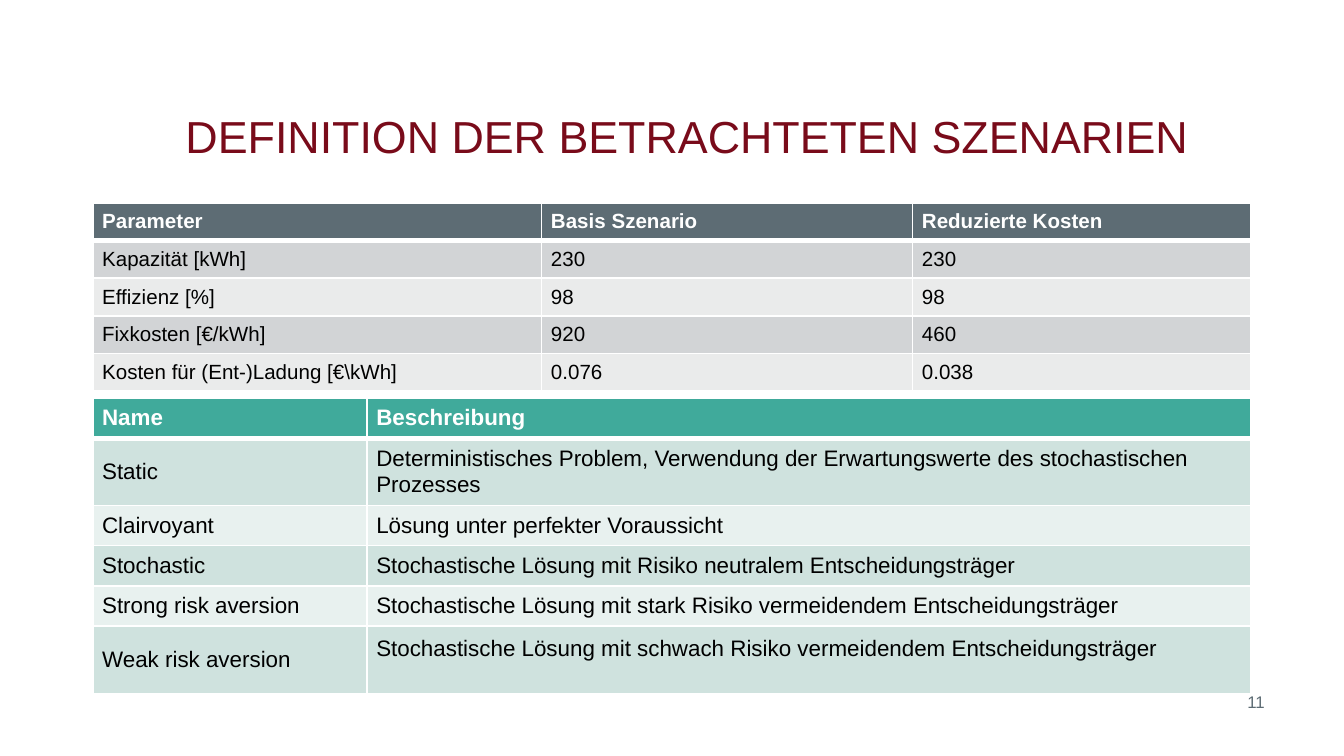
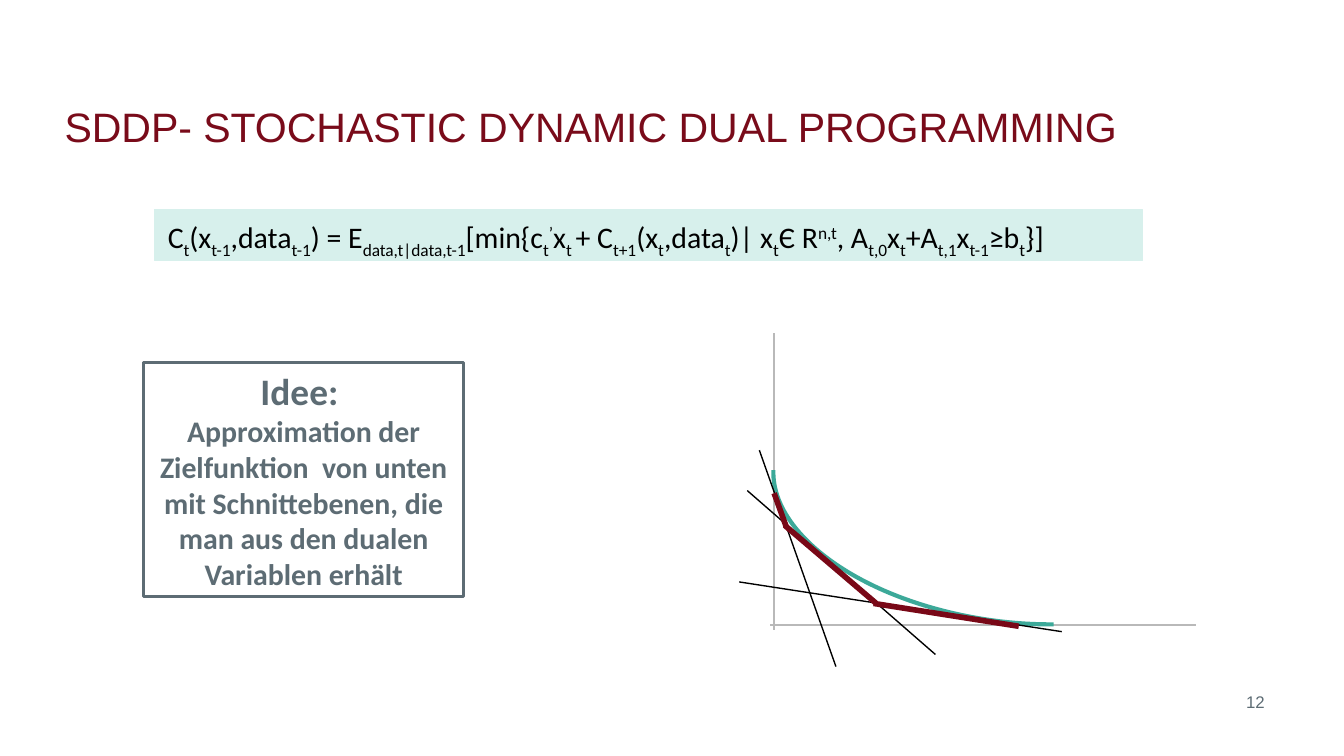
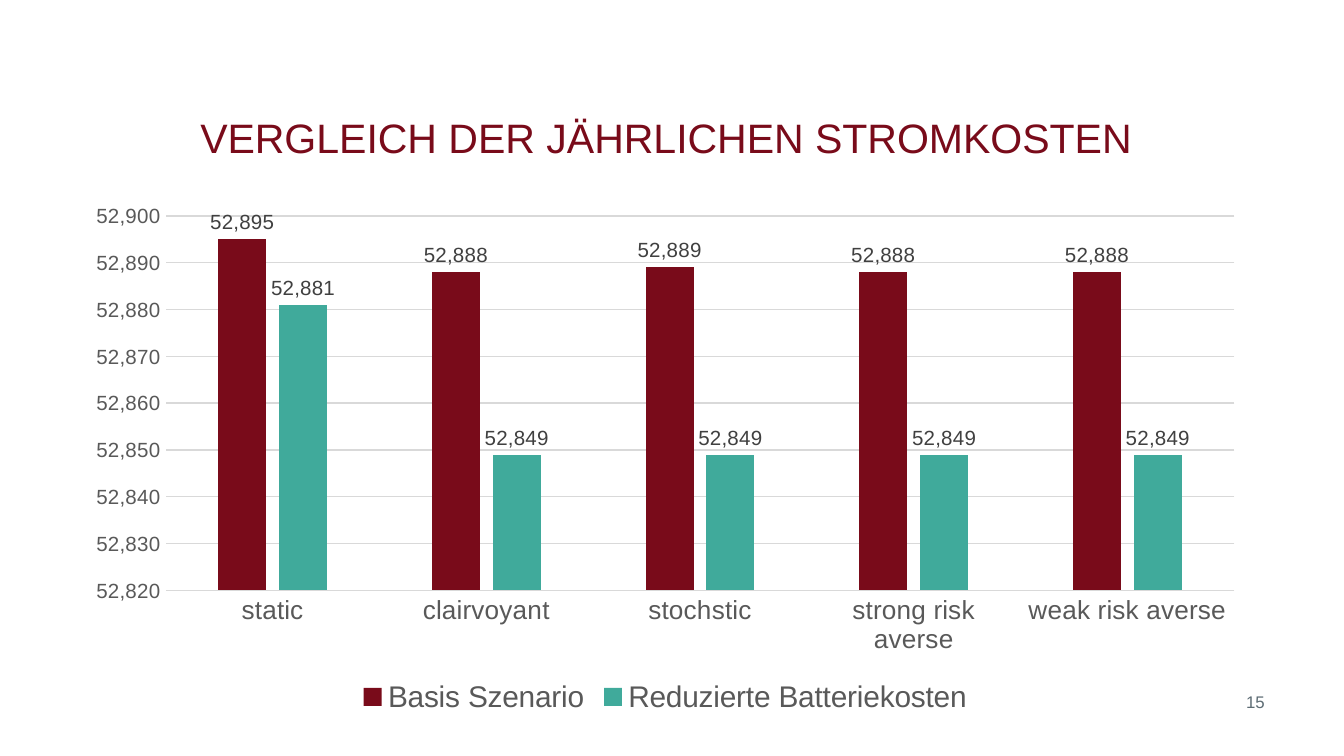
from typing import NamedTuple, Optional, Sequence

from lxml import etree
from pptx import Presentation
from pptx.chart.data import CategoryChartData
from pptx.dml.color import RGBColor
from pptx.enum import chart as ch, shapes, text
from pptx.oxml import ns
from pptx.util import Inches, Pt

WHITE = RGBColor(0xFF, 0xFF, 0xFF)
BLACK = RGBColor(0x00, 0x00, 0x00)
RED = RGBColor(0x79, 0x0B, 0x1A)
CUT_RED = RGBColor(0x79, 0x08, 0x17)
TEAL = RGBColor(0x40, 0xAA, 0x9B)
CURVE_TEAL = RGBColor(0x3C, 0xA9, 0x99)
TEAL_BANDS = (RGBColor(0xCF, 0xE2, 0xDE), RGBColor(0xE8, 0xF1, 0xEF))
MINT = RGBColor(0xD7, 0xF0, 0xEC)
SLATE = RGBColor(0x5D, 0x6C, 0x74)
SLATE_BANDS = (RGBColor(0xD2, 0xD4, 0xD6), RGBColor(0xEA, 0xEB, 0xEB))
AXIS_GRAY = RGBColor(0xB9, 0xB9, 0xB9)
GRID_GRAY = RGBColor(0xD9, 0xD9, 0xD9)
CHART_TEXT = RGBColor(0x59, 0x59, 0x59)
LABEL_TEXT = RGBColor(0x40, 0x40, 0x40)

HEADING_FONT = "Arial"
BODY_FONT = "Calibri"
NUMBER_FORMAT = "#,##0"
TOP, MIDDLE, BOTTOM = (
    text.MSO_ANCHOR.TOP, text.MSO_ANCHOR.MIDDLE, text.MSO_ANCHOR.BOTTOM)


class Box(NamedTuple):
    left: float
    top: float
    width: float
    height: float

    def lengths(self) -> list:
        return [Inches(v) for v in self]


class TableSpec(NamedTuple):
    box: Box
    columns: Sequence[float]
    row_heights: Sequence[float]
    rows: Sequence[Sequence[str]]
    size: int
    head: RGBColor
    bands: Sequence[RGBColor]


class Stroke(NamedTuple):
    x1: float
    y1: float
    x2: float
    y2: float
    color: RGBColor = BLACK
    width: float = 0.75


class Term(NamedTuple):
    base: str
    sub: str = ""
    sup: str = ""


PAGE_NUMBER = Box(7.42, 5.15, 1.99, 0.19)

PARAMETERS = TableSpec(
    Box(0.69, 1.51, 8.62, 1.4), (3.34, 2.76, 2.52), (0.28,) * 5,
    (("Parameter", "Basis Szenario", "Reduzierte Kosten"),
     ("Kapazität [kWh]", "230", "230"),
     ("Effizienz [%]", "98", "98"),
     ("Fixkosten [€/kWh]", "920", "460"),
     ("Kosten für (Ent-)Ladung [€\\kWh]", "0.076", "0.038")),
    11, SLATE, SLATE_BANDS)

MODELS = TableSpec(
    Box(0.69, 2.96, 8.62, 2.2), (2.04, 6.58), (0.3, 0.5, 0.3, 0.3, 0.3, 0.5),
    (("Name", "Beschreibung"),
     ("Static", "Deterministisches Problem, Verwendung der Erwartungswerte "
                "des stochastischen Prozesses"),
     ("Clairvoyant", "Lösung unter perfekter Voraussicht"),
     ("Stochastic",
      "Stochastische Lösung mit Risiko neutralem Entscheidungsträger"),
     ("Strong risk aversion",
      "Stochastische Lösung mit stark Risiko vermeidendem Entscheidungsträger"),
     ("Weak risk aversion",
      "Stochastische Lösung mit schwach Risiko vermeidendem "
      "Entscheidungsträger")),
    12, TEAL, TEAL_BANDS)

FORMULA = (
    Term("C", "t"), Term("(x", "t-1"), Term(",data", "t-1"),
    Term(") = E", "data,t|data,t-1"), Term("[min{c", "t", "’"),
    Term("x", "t "), Term("+ C", "t+1"), Term("(x", "t"), Term(",data", "t"),
    Term(")| x", "t"), Term("Є R", sup="n,t"), Term(", A", "t,0"),
    Term("x", "t"), Term("+A", "t,1"), Term("x", "t-1"), Term("≥b", "t"),
    Term("}]"))

AXES = (
    Stroke(5.76, 2.48, 5.76, 4.69, AXIS_GRAY),
    Stroke(5.73, 4.65, 8.9, 4.65, AXIS_GRAY))
CUTS = (
    Stroke(5.65, 3.35, 6.22, 4.96),
    Stroke(5.5, 4.33, 7.9, 4.7),
    Stroke(5.56, 3.65, 6.96, 4.87),
    Stroke(5.76, 3.67, 5.85, 3.92, CUT_RED, 3),
    Stroke(5.84, 3.91, 6.52, 4.49, CUT_RED, 3),
    Stroke(6.5, 4.49, 7.58, 4.66, CUT_RED, 3))

CATEGORIES = ("static", "clairvoyant", "stochstic", "strong risk averse",
              "weak risk averse")
COSTS = (
    ("Basis Szenario", (52895, 52888, 52889, 52888, 52888), RED),
    ("Reduzierte Batteriekosten", (52881, 52849, 52849, 52849, 52849), TEAL))


def style_font(font, size: float, color: RGBColor,
               name: str = HEADING_FONT, bold: bool = False) -> None:
    font.size, font.name, font.bold = Pt(size), name, bold
    font.color.rgb = color


def add_run(p, content: str, size: float, color: RGBColor,
            name: str = HEADING_FONT, bold: bool = False,
            baseline: int = 0) -> None:
    """Add a run; baseline is its shift in percent of the font size."""
    r = p.add_run()
    r.text = content
    style_font(r.font, size, color, name, bold)
    if baseline:
        r._r.get_or_add_rPr().set("baseline", str(baseline * 1000))


def prepare_frame(tf, anchor, inset: Optional[float] = None) -> None:
    tf.word_wrap = True
    tf.vertical_anchor = anchor
    if inset is not None:
        tf.margin_left = tf.margin_right = Inches(inset)
        tf.margin_top = tf.margin_bottom = Inches(inset)


def add_text(s, box: Box, content: str, *, size: float, color: RGBColor,
             anchor=TOP, align=text.PP_ALIGN.LEFT) -> None:
    tf = s.shapes.add_textbox(*box.lengths()).text_frame
    prepare_frame(tf, anchor, 0)
    p = tf.paragraphs[0]
    p.alignment = align
    add_run(p, content, size, color)


def new_slide(prs, title: str, box: Box, number: int, *,
              size: int = 22, anchor=MIDDLE):
    s = prs.slides.add_slide(prs.slide_layouts[6])
    add_text(s, box, title, size=size, color=RED, anchor=anchor)
    add_text(s, PAGE_NUMBER, str(number), size=9, color=SLATE,
             align=text.PP_ALIGN.RIGHT)
    return s


def add_border(cell, side: str, width: float) -> None:
    ln = etree.SubElement(cell._tc.get_or_add_tcPr(), ns.qn(f"a:ln{side}"),
                          w=str(Pt(width)))
    fill = etree.SubElement(ln, ns.qn("a:solidFill"))
    etree.SubElement(fill, ns.qn("a:srgbClr"), val=str(WHITE))


def add_table(s, spec: TableSpec):
    table = s.shapes.add_table(len(spec.rows), len(spec.columns),
                               *spec.box.lengths()).table
    for column, width in zip(table.columns, spec.columns):
        column.width = Inches(width)
    for i, (row, height) in enumerate(zip(table.rows, spec.row_heights)):
        row.height = Inches(height)
        head = i == 0
        for cell, content in zip(row.cells, spec.rows[i]):
            for side in "LRTB":
                thick = (i, side) in ((0, "B"), (1, "T"))
                add_border(cell, side, 3 if thick else 1)
            cell.fill.solid()
            cell.fill.fore_color.rgb = (
                spec.head if head else spec.bands[(i - 1) % 2])
            cell.vertical_anchor = MIDDLE
            cell.margin_left = cell.margin_right = Inches(0.07)
            cell.margin_top = cell.margin_bottom = Inches(0.03)
            add_run(cell.text_frame.paragraphs[0], content, spec.size,
                    WHITE if head else BLACK, bold=head)
    return table


def add_box(s, kind, box: Box, line: RGBColor, width: float,
            fill: Optional[RGBColor] = None):
    sp = s.shapes.add_shape(kind, *box.lengths())
    sp.shadow.inherit = False
    if fill is None:
        sp.fill.background()
    else:
        sp.fill.solid()
        sp.fill.fore_color.rgb = fill
    sp.line.color.rgb = line
    sp.line.width = Pt(width)
    return sp


def add_stroke(s, stroke: Stroke) -> None:
    ends = [Inches(v) for v in stroke[:4]]
    line = s.shapes.add_connector(shapes.MSO_CONNECTOR.STRAIGHT, *ends)
    line.line.color.rgb = stroke.color
    line.line.width = Pt(stroke.width)
    etree.SubElement(line._element.spPr, ns.qn("a:effectLst"))


def add_formula(s) -> None:
    sp = add_box(s, shapes.MSO_SHAPE.RECTANGLE, Box(1.15, 1.56, 7.35, 0.38),
                 MINT, 0.75, MINT)
    tf = sp.text_frame
    prepare_frame(tf, TOP)
    tf.auto_size = text.MSO_AUTO_SIZE.SHAPE_TO_FIT_TEXT
    p = tf.paragraphs[0]
    p.alignment = text.PP_ALIGN.LEFT
    p.line_spacing = 1.07
    for term in FORMULA:
        for content, baseline in zip(term, (0, -25, 30)):
            if content:
                add_run(p, content, 16, BLACK, BODY_FONT, baseline=baseline)


def add_idea(s) -> None:
    sp = add_box(s, shapes.MSO_SHAPE.RECTANGLE, Box(1.07, 2.7, 2.38, 1.74),
                 SLATE, 1.5)
    tf = sp.text_frame
    prepare_frame(tf, MIDDLE, 0)
    lines = (("Idee: ", 20),
             ("Approximation der Zielfunktion  von unten mit Schnittebenen, "
              "die man aus den dualen Variablen erhält", 16))
    for i, (content, size) in enumerate(lines):
        p = tf.add_paragraph() if i else tf.paragraphs[0]
        p.alignment = text.PP_ALIGN.CENTER
        add_run(p, content, size, SLATE, BODY_FONT, bold=True)


def add_cost_curve(s) -> None:
    """Draw the convex cost function and the cuts that bound it from below."""
    for stroke in AXES:
        add_stroke(s, stroke)
    arc = add_box(s, shapes.MSO_SHAPE.ARC, Box(5.74, 2.78, 3.48, 1.84),
                  CURVE_TEAL, 2.25)
    arc.rotation = 188.5
    arc.adjustments[0], arc.adjustments[1] = 144.42, 214.89
    for stroke in CUTS:
        add_stroke(s, stroke)


def add_cost_chart(s) -> None:
    data = CategoryChartData(number_format=NUMBER_FORMAT)
    data.categories = CATEGORIES
    for name, values, _ in COSTS:
        data.add_series(name, values)
    chart = s.shapes.add_chart(ch.XL_CHART_TYPE.COLUMN_CLUSTERED,
                               *Box(0.54, 1.44, 8.82, 3.91).lengths(),
                               data).chart
    style_font(chart.font, 10, BLACK)
    chart.has_title = False
    chart.has_legend = True
    chart.legend.position = ch.XL_LEGEND_POSITION.BOTTOM
    chart.legend.include_in_layout = False
    style_font(chart.legend.font, 16, CHART_TEXT)

    for axis, size in ((chart.category_axis, 14), (chart.value_axis, 11)):
        axis.major_tick_mark = axis.minor_tick_mark = ch.XL_TICK_MARK.NONE
        style_font(axis.tick_labels.font, size, CHART_TEXT)
    costs = chart.value_axis
    costs.minimum_scale, costs.maximum_scale, costs.major_unit = 52820, 52900, 10
    costs.tick_labels.number_format = NUMBER_FORMAT
    costs.tick_labels.number_format_is_linked = False
    costs.format.line.fill.background()
    for line in (chart.category_axis.format.line,
                 costs.major_gridlines.format.line):
        line.color.rgb = GRID_GRAY
        line.width = Pt(0.75)

    plot = chart.plots[0]
    plot.vary_by_categories = False
    plot.gap_width, plot.overlap = 219, -27
    for series, (_, _, color) in zip(plot.series, COSTS):
        series.format.fill.solid()
        series.format.fill.fore_color.rgb = color
        labels = series.data_labels
        labels.show_value = True
        labels.position = ch.XL_LABEL_POSITION.OUTSIDE_END
        labels.number_format = NUMBER_FORMAT
        labels.number_format_is_linked = False
        style_font(labels.font, 11, LABEL_TEXT)


def main() -> None:
    prs = Presentation()
    prs.slide_width = Inches(10)
    prs.slide_height = prs.slide_width * 9 // 16

    s = new_slide(prs, "DEFINITION DER BETRACHTETEN SZENARIEN",
                  Box(1.38, 0.39, 8.62, 1.24), 11, size=24)
    add_table(s, PARAMETERS)
    models = add_table(s, MODELS)
    models.cell(5, 1).margin_bottom = Inches(0.2)

    s = new_slide(prs, "SDDP- STOCHASTIC DYNAMIC DUAL PROGRAMMING",
                  Box(0.48, 0.09, 8.02, 1.03), 12, anchor=BOTTOM)
    add_formula(s)
    add_idea(s)
    add_cost_curve(s)

    s = new_slide(prs, "VERGLEICH DER JÄHRLICHEN STROMKOSTEN",
                  Box(1.49, 0.4, 8.62, 1.24), 15)
    add_cost_chart(s)

    prs.save("out.pptx")


if __name__ == "__main__":
    main()
